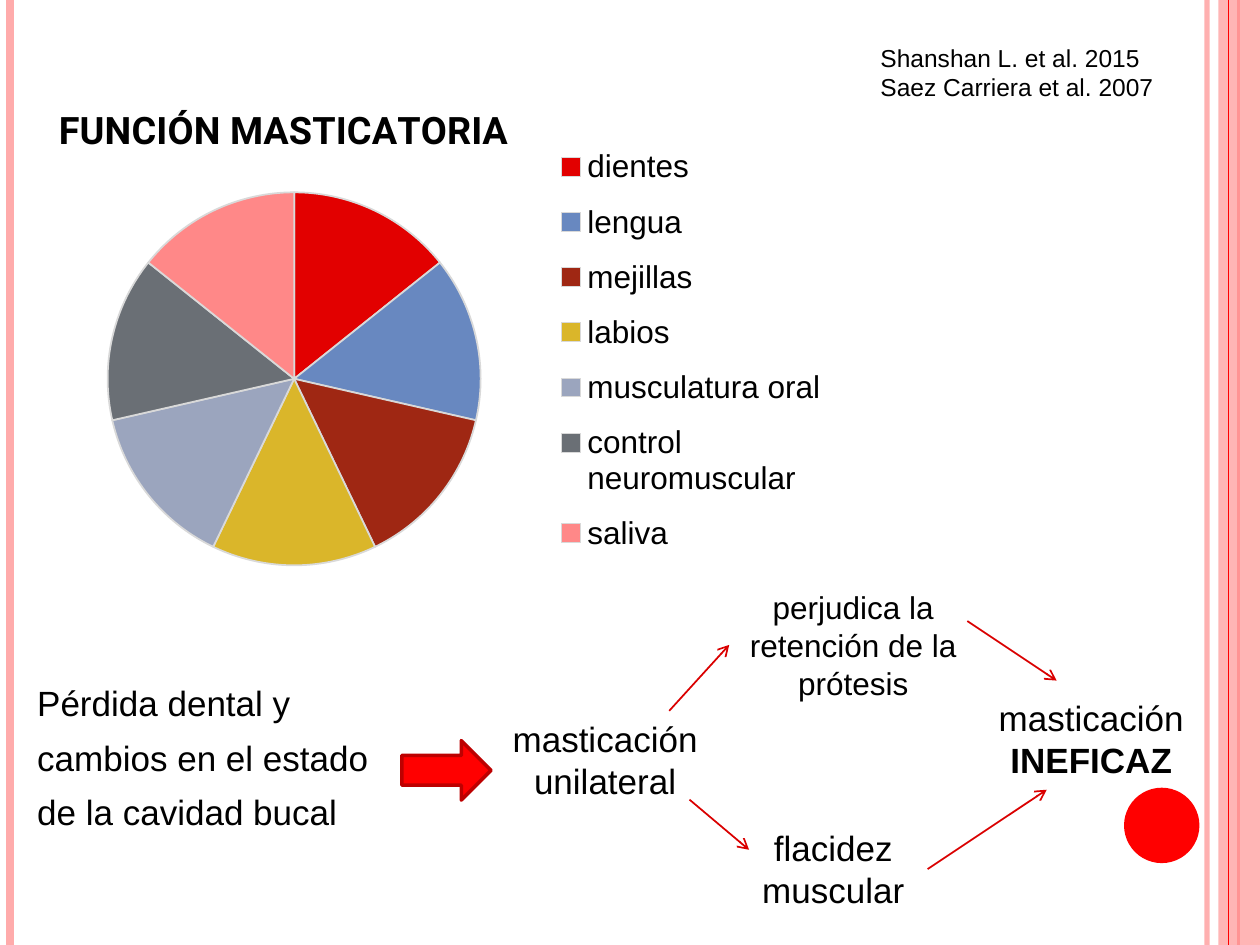
from lxml.etree import SubElement
from pptx import Presentation
from pptx.chart.data import CategoryChartData
from pptx.dml.color import RGBColor
from pptx.enum.chart import XL_CHART_TYPE as ChartType, XL_LEGEND_POSITION as LegendPosition
from pptx.enum.shapes import MSO_CONNECTOR as Connector, MSO_SHAPE as Shape
from pptx.enum.text import PP_ALIGN as Align
from pptx.oxml import parse_xml
from pptx.oxml.ns import nsdecls, qn
from pptx.util import Cm, Pt

SLICES = [
    ("dientes", "E20000"), ("lengua", "6888C0"), ("mejillas", "9F2713"),
    ("labios", "DAB62A"), ("musculatura oral", "9BA5BE"),
    ("control neuromuscular", "6A6F75"), ("saliva", "FF8888"),
]
EFFECTS = [
    ("masticación", "unilateral", 9.7, 14.33, 20),
    ("flacidez", "muscular", 14.3, 16.53, 20),
]
ARROWS = [
    (13.49, 14.33, 14.7, 13), (13.9, 16.12, 15.1, 17.13),
    (19.5, 12.52, 21.3, 13.72), (18.7, 17.52, 21.1, 15.92),
]


def color(hex_text):
    """Return the colour for a hex string."""
    return RGBColor.from_string(hex_text)


def set_alpha(shape, percent):
    """Make the first solid colour of a shape partly transparent."""
    tint = next(shape._element.spPr.iter(qn("a:srgbClr")))
    SubElement(tint, qn("a:alpha")).set("val", str(percent * 1000))


def style_font(font, size, name="Arial", bold=False):
    """Give a font its face, size and black colour."""
    font.name, font.size, font.bold = name, Pt(size), bold
    font.color.rgb = color("000000")


def add_line(page, x1, y1, x2, y2, hex_text, width, arrow=False):
    """Draw a straight line, with an open arrowhead at its end if asked."""
    line = page.shapes.add_connector(
        Connector.STRAIGHT, Cm(x1), Cm(y1), Cm(x2), Cm(y2))
    line.line.color.rgb = color(hex_text)
    line.line.width = Pt(width)
    if arrow:
        SubElement(line.line._get_or_add_ln(), qn("a:tailEnd")).set("type", "arrow")
    SubElement(line._element.spPr, qn("a:effectLst"))
    return line


def add_block(page, kind, left, top, width, height, fill, border=None):
    """Draw a filled preset shape with an optional border."""
    block = page.shapes.add_shape(kind, Cm(left), Cm(top), Cm(width), Cm(height))
    block.shadow.inherit = False
    block.fill.solid()
    block.fill.fore_color.rgb = color(fill)
    if border:
        block.line.color.rgb = color(border)
        block.line.width = Pt(2)
    else:
        block.line.fill.background()
    return block


def add_text(page, left, top, width, height, paragraphs, size, align=Align.LEFT, gap=0):
    """Write paragraphs, each a list of (text, bold) runs."""
    box = page.shapes.add_textbox(Cm(left), Cm(top), Cm(width), Cm(height))
    frame = box.text_frame
    frame.word_wrap = True
    for index, runs in enumerate(paragraphs):
        para = frame.paragraphs[0] if index == 0 else frame.add_paragraph()
        para.alignment = align
        para.space_after = Pt(gap)
        for text, bold in runs:
            span = para.add_run()
            span.text = text
            style_font(span.font, size, bold=bold)


def place(element, x, y, width=None, height=None, inner=False):
    """Fix the place of a chart part in fractions of the chart."""
    for old in element.findall(qn("c:layout")):
        element.remove(old)
    target = '<c:layoutTarget val="inner"/>' if inner else ""
    values = [("x", x), ("y", y)]
    if width:
        values += [("w", width), ("h", height)]
    modes = "".join(f'<c:{key}Mode val="edge"/>' for key in ("x", "y"))
    sizes = "".join(f'<c:{key} val="{value}"/>' for key, value in values)
    layout = parse_xml(
        f'<c:layout {nsdecls("c")}><c:manualLayout>{target}{modes}{sizes}'
        "</c:manualLayout></c:layout>")
    before = [child for child in element
              if child.tag in (qn("c:tx"), qn("c:legendPos"))]
    element.insert(len(before), layout)


def add_pie(page):
    """Add the pie of the parts of the chewing function."""
    data = CategoryChartData()
    data.categories = [name for name, _ in SLICES]
    data.add_series("Series 1", [14] * len(SLICES))
    chart = page.shapes.add_chart(
        ChartType.PIE, Cm(0.89), Cm(1.12), Cm(16), Cm(10.6), data).chart
    style_font(chart.font, 18)
    chart.has_title = True
    span = chart.chart_title.text_frame.paragraphs[0].add_run()
    span.text = "FUNCIÓN MASTICATORIA"
    style_font(span.font, 21.6, "Roboto", True)
    chart.chart_title.include_in_layout = False
    chart.has_legend = True
    chart.legend.position = LegendPosition.RIGHT
    chart.legend.include_in_layout = False
    style_font(chart.legend.font, 18)
    plot = chart.plots[0]
    plot.vary_by_categories = True
    for index, (_, fill) in enumerate(SLICES):
        form = plot.series[0].points[index].format
        form.fill.solid()
        form.fill.fore_color.rgb = color(fill)
        form.line.color.rgb = color("D9D9D9")
        form.line.width = Pt(1)
    place(chart.chart_title._element, 0.01, 0.08)
    place(chart.legend._element, 0.64, 0.14, 0.35, 0.84)
    place(chart._chartSpace.chart.plotArea, 0.08, 0.26, 0.47, 0.71, True)


def add_frame(page):
    """Draw the bands at the slide edges and the corner disc."""
    set_alpha(add_line(page, 24.33, 0, 24.33, 19.05, "FFABAB", 3), 93)
    add_line(page, 0.2, 0, 0.2, 19.05, "FFABAB", 4.5)
    add_line(page, 24.97, 0, 24.97, 19.05, "FF0000", 1.5)
    set_alpha(add_block(page, Shape.RECTANGLE, 24.56, 0, 0.84, 19.05, "FFABAB"), 87)
    add_line(page, 24.77, 0, 24.77, 19.05, "FF0000", 0.75)
    add_block(page, Shape.OVAL, 22.66, 15.88, 1.52, 1.52, "FF0000")


def main():
    """Build the slide and save it."""
    deck = Presentation()
    deck.slide_width, deck.slide_height = Cm(25.4), Cm(19.05)
    page = deck.slides.add_slide(deck.slide_layouts[6])
    add_frame(page)
    causes = ["Pérdida dental y", "cambios en el estado", "de la cavidad bucal"]
    add_text(page, 0.5, 13.62, 9.2, 3.4, [[(text, False)] for text in causes], 20, gap=7)
    add_pie(page)
    for first, second, left, top, size in EFFECTS:
        add_text(page, left, top, 5, 1.96, [[(f"{first} {second}", False)]],
                 size, Align.CENTER)
    add_text(page, 14.7, 11.73, 5, 2.57,
             [[("perjudica la retención de la prótesis", False)]], 18, Align.CENTER)
    add_text(page, 19.5, 13.92, 5, 1.96,
             [[("masticación ", False), ("INEFICAZ", True)]], 20, Align.CENTER)
    add_block(page, Shape.RIGHT_ARROW, 8.1, 14.93, 1.8, 1.2, "FF0000", "BD0000")
    for ends in ARROWS:
        add_line(page, *ends, "DA0000", 1, arrow=True)
    sources = ["Shanshan L. et al. 2015", "Saez Carriera et al. 2007"]
    add_text(page, 17.5, 0.74, 7, 1.45, [[(text, False)] for text in sources], 14)
    deck.save("out.pptx")


if __name__ == "__main__":
    main()
